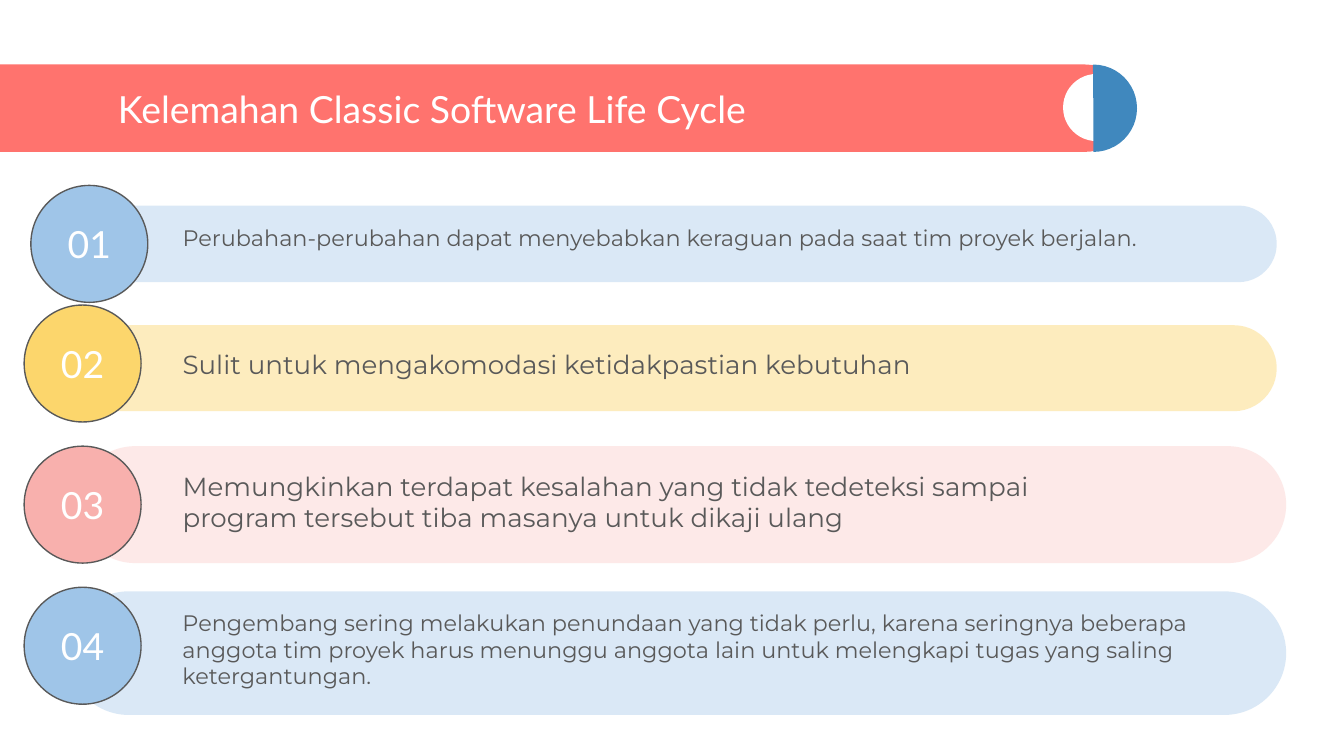
from lxml import etree
from pptx import Presentation
from pptx.dml.color import RGBColor
from pptx.enum import shapes, text
from pptx.oxml.ns import qn
from pptx.util import Inches, Pt

KIND = shapes.MSO_SHAPE
GREY, WHITE, BLUE = "595959", "FFFFFF", "9FC5E8"
BALL = 0.87

# bar (left, top, width, height), bar colour, opacity %,
# ball (left, top), ball colour, text (top, width), size, wording
ROWS = [
    ((0.5, 1.53, 9, 0.57), BLUE, 38, (0.23, 1.38), BLUE, (1.57, 8.51), 12,
     "Perubahan-perubahan dapat menyebabkan keraguan pada saat tim proyek "
     "berjalan."),
    ((0.5, 2.42, 9, 0.64), "FBBE18", 28, (0.18, 2.27), "FCD66C", (2.49, 7.38), 14,
     "Sulit untuk mengakomodasi ketidakpastian kebutuhan"),
    ((0.57, 3.32, 9, 0.87), "F8B0AD", 28, (0.18, 3.32), "F8B0AD", (3.4, 7.38), 14,
     "Memungkinkan terdapat kesalahan yang tidak tedeteksi sampai program "
     "tersebut tiba masanya untuk dikaji ulang"),
    ((0.5, 4.4, 9.07, 0.92), BLUE, 38, (0.18, 4.37), BLUE, (4.43, 8.24), 12,
     "Pengembang sering melakukan penundaan yang tidak perlu, karena seringnya "
     "beberapa anggota tim proyek harus menunggu anggota lain untuk melengkapi "
     "tugas yang saling ketergantungan."),
]


def color(code):
    return RGBColor.from_string(code)


def shape(slide, kind, box, fill, alpha=100, adj=(), turn=0):
    item = slide.shapes.add_shape(kind, *map(Inches, box))
    item.shadow.inherit = False
    item.fill.solid()
    item.fill.fore_color.rgb = color(fill)
    item.line.fill.background()
    item.rotation = turn
    for i, value in enumerate(adj):
        item.adjustments[i] = value
    if alpha < 100:
        tone = item.element.spPr.find(qn("a:solidFill")).find(qn("a:srgbClr"))
        etree.SubElement(tone, qn("a:alpha"), val=str(alpha * 1000))
    return item


def write(item, words, size, font, ink, align="LEFT", anchor="TOP", after=0):
    frame = item.text_frame
    frame.word_wrap = True
    frame.vertical_anchor = getattr(text.MSO_ANCHOR, anchor)
    frame.margin_left = frame.margin_right = Inches(0.1)
    frame.margin_top = frame.margin_bottom = Inches(0.1)
    para = frame.paragraphs[0]
    para.text = words
    para.alignment = getattr(text.PP_ALIGN, align)
    para.space_after = Pt(after)
    para.font.size = Pt(size)
    para.font.name = font
    para.font.color.rgb = color(ink)


def label(slide, box, *args, **more):
    write(slide.shapes.add_textbox(*map(Inches, box)), *args, **more)


def header(slide):
    shape(slide, KIND.ROUNDED_RECTANGLE, (-0.32, 0.48, 8.72, 0.65), "FF736E",
          adj=[0.5])
    shape(slide, KIND.OVAL, (7.91, 0.55, 0.5, 0.5), WHITE, turn=180)
    shape(slide, KIND.PIE, (7.81, 0.48, 0.65, 0.65), "4088BE",
          adj=[53.67, 162], turn=180)
    label(slide, (0.78, 0.6, 6.97, 0.41), "Kelemahan Classic Software Life Cycle",
          20, "Lato", WHITE, anchor="MIDDLE")


def point(slide, num, bar, tint, alpha, spot, fill, place, size, words):
    shape(slide, KIND.ROUNDED_RECTANGLE, bar, tint, alpha, [0.5])
    top, width = place
    label(slide, (1.26, top, width, 0.89), words, size, "Montserrat", GREY,
          after=16)
    ball = shape(slide, KIND.OVAL, (*spot, BALL, BALL), fill)
    ball.line.color.rgb = color(GREY)
    ball.line.width = Pt(0.75)
    write(ball, f"{num:02}", 20, "Lato", WHITE, "CENTER", "MIDDLE")


def main():
    deck = Presentation()
    # Wide 16:9 page
    deck.slide_width = Inches(10)
    deck.slide_height = Inches(10 * 9 / 16)
    slide = deck.slides.add_slide(deck.slide_layouts[6])
    # Title band
    header(slide)
    # Numbered points
    for num, row in enumerate(ROWS, 1):
        point(slide, num, *row)
    deck.save("out.pptx")


main()
